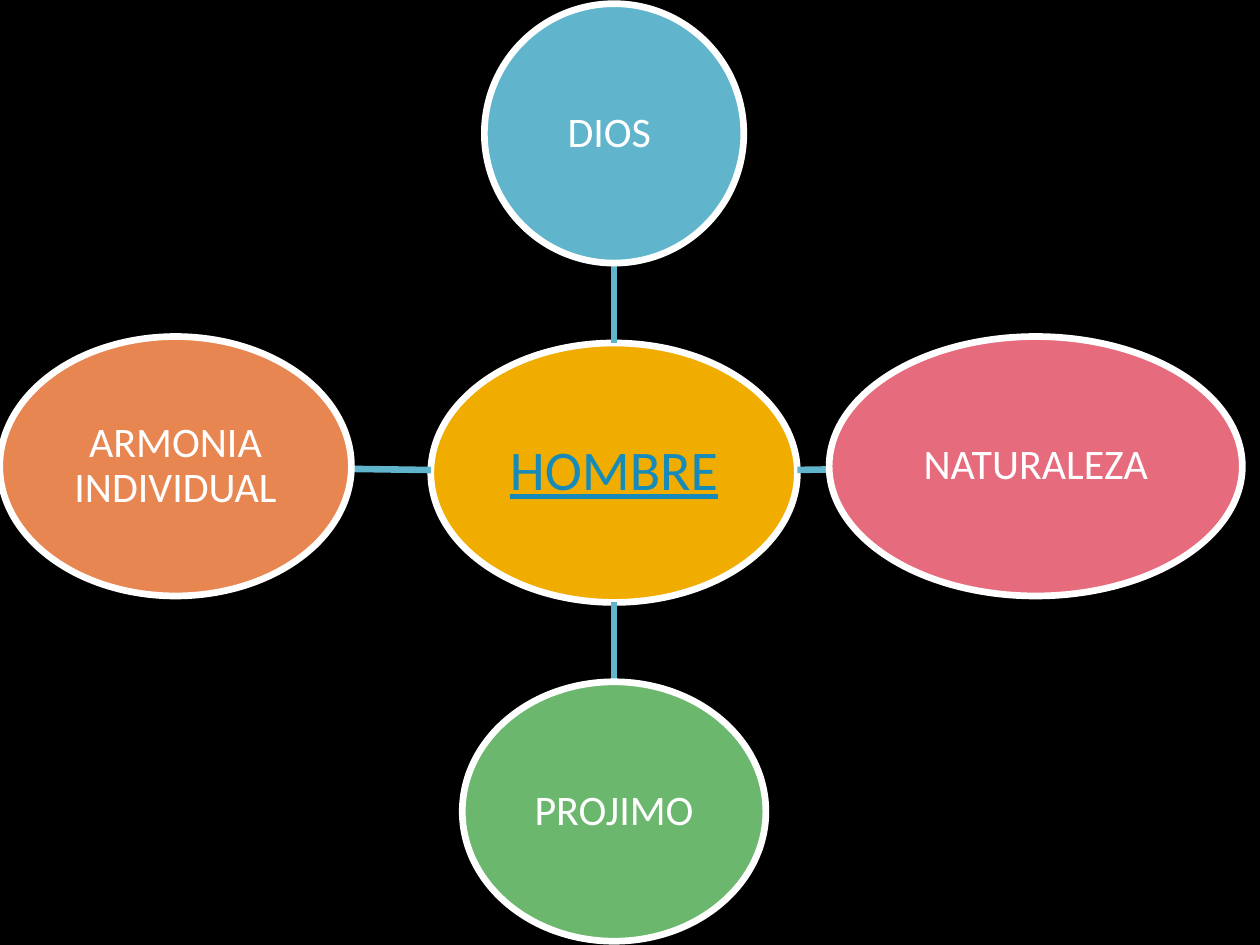
"""Build a slide of a central idea joined to four surrounding ideas."""
from dataclasses import dataclass
from math import hypot

from lxml import etree
from pptx import Presentation
from pptx import util as u
from pptx.dml import color
from pptx.enum import shapes, text
from pptx.oxml import ns
from pptx.slide import Slide


@dataclass(frozen=True)
class Theme:
    background: str = "000000"
    outline: str = "FFFFFF"
    link: str = "60B5CC"
    label: str = "FFFFFF"
    hub_label: str = "168BBA"
    font: str = "Calibri"
    hub_size: int = 32
    size: int = 24
    outline_width: float = 3.82
    link_width: float = 3.78


@dataclass(frozen=True)
class Bubble:
    label: str
    x: float
    y: float
    width: float
    fill: str
    height: float = 5.23

    def edge_towards(self, other: "Bubble") -> tuple[float, float]:
        dx, dy = other.x - self.x, other.y - self.y
        reach = 1 / hypot(dx / (self.width / 2), dy / (self.height / 2))
        return self.x + dx * reach, self.y + dy * reach


THEME = Theme()
HUB = Bubble("HOMBRE", 12.38, 9.53, 7.39, "F0AD00")
SATELLITES = (
    Bubble("DIOS ", 12.38, 2.69, 5.23, "60B5CC"),
    Bubble("NATURALEZA", 20.88, 9.4, 8.33, "E66C7D"),
    Bubble("PROJIMO", 12.38, 16.36, 6.12, "6BB76D"),
    Bubble("ARMONIA INDIVIDUAL", 3.54, 9.4, 7.09, "E88651"),
)


def rgb(value: str) -> color.RGBColor:
    return color.RGBColor.from_string(value)


def write(frame, content: str, *, size: int, ink: str, underline: bool = False) -> None:
    frame.word_wrap = True
    frame.vertical_anchor = text.MSO_ANCHOR.MIDDLE
    frame.margin_left = frame.margin_right = u.Cm(0.05)
    frame.margin_top = frame.margin_bottom = u.Cm(0.05)
    para = frame.paragraphs[0]
    para.alignment = text.PP_ALIGN.CENTER
    para.line_spacing = 0.9
    span = para.add_run()
    span.text = content
    span.font.name = THEME.font
    span.font.size = u.Pt(size)
    span.font.color.rgb = rgb(ink)
    span.font.underline = underline


def draw_bubble(page: Slide, bubble: Bubble, **text_format) -> None:
    oval = page.shapes.add_shape(
        shapes.MSO_SHAPE.OVAL,
        u.Cm(bubble.x - bubble.width / 2), u.Cm(bubble.y - bubble.height / 2),
        u.Cm(bubble.width), u.Cm(bubble.height),
    )
    oval.shadow.inherit = False
    oval.fill.solid()
    oval.fill.fore_color.rgb = rgb(bubble.fill)
    oval.line.color.rgb = rgb(THEME.outline)
    oval.line.width = u.Pt(THEME.outline_width)
    write(oval.text_frame, bubble.label, **text_format)


def draw_link(page: Slide, start: Bubble, end: Bubble) -> None:
    points = (*start.edge_towards(end), *end.edge_towards(start))
    link = page.shapes.add_connector(
        shapes.MSO_CONNECTOR.STRAIGHT, *(u.Cm(value) for value in points)
    )
    link.line.color.rgb = rgb(THEME.link)
    link.line.width = u.Pt(THEME.link_width)
    etree.SubElement(link._element.spPr, ns.qn("a:effectLst"))


def main() -> None:
    deck = Presentation()
    deck.slide_width, deck.slide_height = u.Cm(25.4), u.Cm(19.05)
    page = deck.slides.add_slide(deck.slide_layouts[6])
    page.background.fill.solid()
    page.background.fill.fore_color.rgb = rgb(THEME.background)
    draw_bubble(page, HUB, size=THEME.hub_size, ink=THEME.hub_label, underline=True)
    for satellite in SATELLITES:
        draw_link(page, HUB, satellite)
        draw_bubble(page, satellite, size=THEME.size, ink=THEME.label)
    deck.save("out.pptx")


if __name__ == "__main__":
    main()
